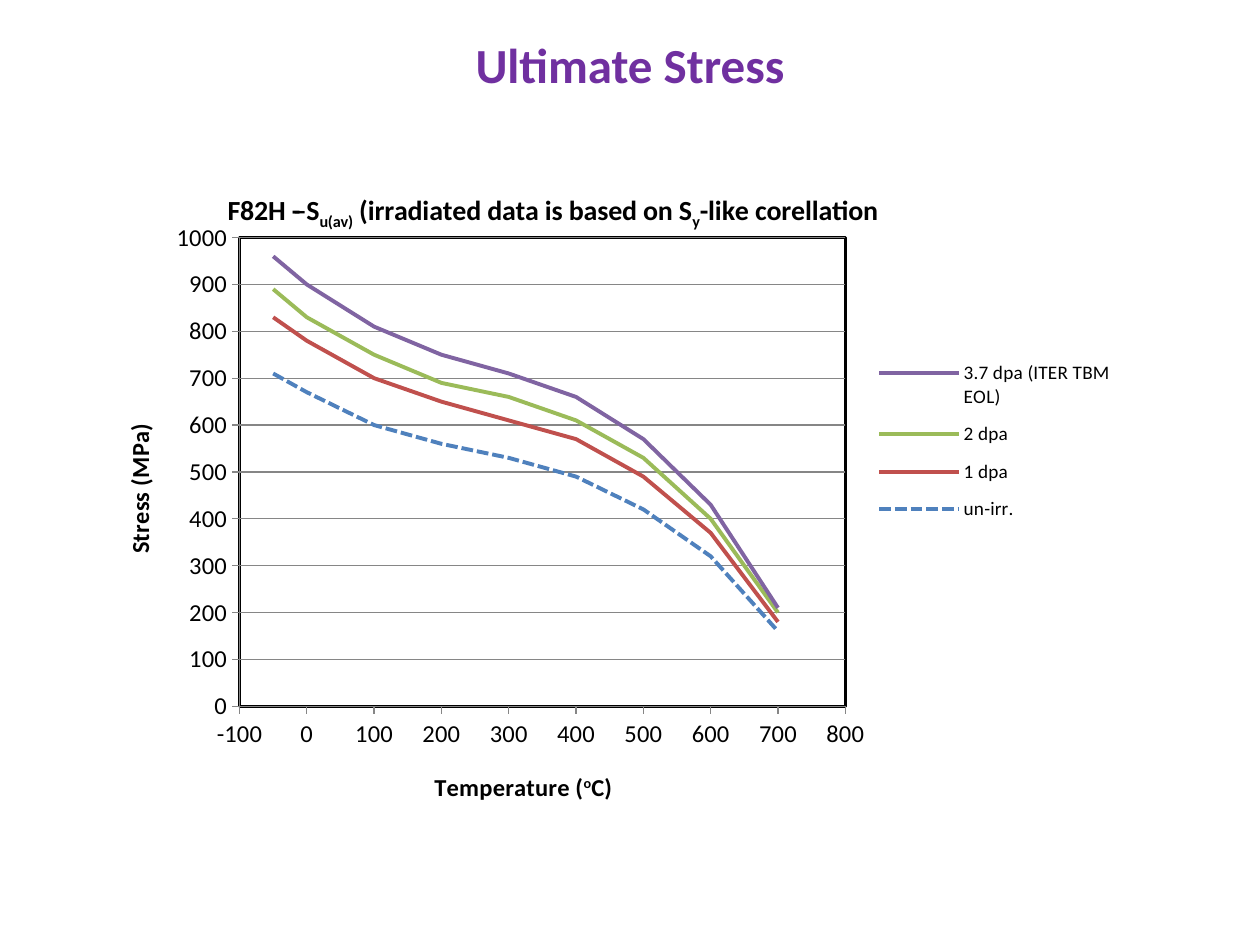
from lxml import etree
from pptx import Presentation
from pptx.chart.data import XyChartData
from pptx.dml.color import RGBColor
from pptx.enum.chart import XL_AXIS_CROSSES as Crosses
from pptx.enum.chart import XL_CHART_TYPE as ChartType
from pptx.enum.chart import XL_LEGEND_POSITION as LegendPosition
from pptx.enum.chart import XL_TICK_MARK as TickMark
from pptx.enum.dml import MSO_LINE as Dash
from pptx.enum.text import MSO_ANCHOR as Anchor
from pptx.enum.text import PP_ALIGN as Align
from pptx.oxml import parse_xml
from pptx.oxml.ns import nsdecls, qn
from pptx.util import Inches, Pt

BLACK = RGBColor(0x00, 0x00, 0x00)
GRAY = RGBColor(0x86, 0x86, 0x86)
PURPLE = RGBColor(0x70, 0x30, 0xA0)
VIOLET = RGBColor(0x80, 0x64, 0xA2)
GREEN = RGBColor(0x9B, 0xBB, 0x59)
RED = RGBColor(0xC0, 0x50, 0x4D)
BLUE = RGBColor(0x4F, 0x81, 0xBD)
FONT = "Calibri"
SUBSCRIPT, SUPERSCRIPT = -25000, 30000

TEMPERATURES = [-50, 0, 100, 200, 300, 400, 500, 600, 700]
CURVES = [
    ("3.7 dpa (ITER TBM EOL)", VIOLET, Dash.SOLID,
     [960, 900, 810, 750, 710, 660, 570, 430, 210]),
    ("2 dpa", GREEN, Dash.SOLID,
     [890, 830, 750, 690, 660, 610, 530, 400, 200]),
    ("1 dpa", RED, Dash.SOLID,
     [830, 780, 700, 650, 610, 570, 490, 370, 180]),
    ("un-irr.", BLUE, Dash.SQUARE_DOT,
     [710, 670, 600, 560, 530, 490, 420, 320, 160]),
]


def style_font(font, size, bold=False, color=BLACK):
    font.name = FONT
    font.size = Pt(size)
    font.bold = bold
    font.color.rgb = color


def add_spans(para, spans, size, color=BLACK):
    for text, baseline in spans:
        span = para.add_run()
        span.text = text
        style_font(span.font, size, True, color)
        if baseline:
            span.font._element.set("baseline", str(baseline))


def make_layout(x, y, w=None, h=None, inner=False):
    layout = etree.Element(qn("c:layout"))
    manual = etree.SubElement(layout, qn("c:manualLayout"))
    settings = [("xMode", "edge"), ("yMode", "edge"),
                ("x", x), ("y", y), ("w", w), ("h", h)]
    if inner:
        settings.insert(0, ("layoutTarget", "inner"))
    for name, value in settings:
        if value is not None:
            etree.SubElement(manual, qn(f"c:{name}")).set("val", str(value))
    return layout


def remove_layout(element):
    for layout in element.findall(qn("c:layout")):
        element.remove(layout)


def fill_chart_title(title, spans, size, x, y):
    add_spans(title.text_frame.paragraphs[0], spans, size)
    element = title._element
    remove_layout(element)
    element.find(qn("c:tx")).addnext(make_layout(x, y))


def add_heading(page, text):
    box = page.shapes.title
    box.left, box.top = Inches(0), Inches(0.17)
    box.width, box.height = Inches(10), Inches(0.67)
    frame = box.text_frame
    frame.vertical_anchor = Anchor.MIDDLE
    para = frame.paragraphs[0]
    para.alignment = Align.CENTER
    add_spans(para, [(text, 0)], 28, PURPLE)


def format_axis(axis, low, high):
    axis.minimum_scale, axis.maximum_scale = low, high
    axis.major_unit = 100
    axis.major_tick_mark = TickMark.OUTSIDE
    axis.minor_tick_mark = TickMark.NONE
    axis.crosses = Crosses.MINIMUM
    axis.tick_labels.number_format = "0"
    axis.tick_labels.number_format_is_linked = False
    axis.format.line.color.rgb = GRAY
    axis.format.line.width = Pt(0.75)
    style_font(axis.tick_labels.font, 14)


def format_plot_area(chart):
    area = chart._chartSpace.chart.plotArea
    remove_layout(area)
    area.insert(0, make_layout(0.138, 0.094, 0.539, 0.75, inner=True))
    area.append(parse_xml(
        f'<c:spPr {nsdecls("c", "a")}><a:noFill/><a:ln w="{Pt(2)}">'
        f'<a:solidFill><a:srgbClr val="{BLACK}"/></a:solidFill></a:ln></c:spPr>'))


def format_legend(chart):
    chart.has_legend = True
    legend = chart.legend
    legend.position = LegendPosition.RIGHT
    legend.include_in_layout = False
    style_font(legend.font, 11)
    remove_layout(legend._element)
    legend._element.find(qn("c:legendPos")).addnext(
        make_layout(0.7, 0.27, 0.22, 0.3))


def add_stress_chart(page):
    data = XyChartData()
    for name, color, dash, stresses in CURVES:
        series = data.add_series(name)
        for temperature, stress in zip(TEMPERATURES, stresses):
            series.add_data_point(temperature, stress)
    chart = page.shapes.add_chart(
        ChartType.XY_SCATTER_SMOOTH_NO_MARKERS, Inches(0.67), Inches(1.42),
        Inches(8.92), Inches(5), data).chart
    style_font(chart.font, 14)
    chart.plots[0].vary_by_categories = False
    for series, (name, color, dash, stresses) in zip(chart.plots[0].series, CURVES):
        series.smooth = True
        series.format.line.color.rgb = color
        series.format.line.width = Pt(2.25)
        series.format.line.dash_style = dash

    temperature_axis, stress_axis = chart.category_axis, chart.value_axis
    format_axis(temperature_axis, -100, 800)
    format_axis(stress_axis, 0, 1000)
    temperature_axis.has_major_gridlines = False
    stress_axis.has_major_gridlines = True
    stress_axis.major_gridlines.format.line.color.rgb = GRAY
    stress_axis.major_gridlines.format.line.width = Pt(0.75)
    format_plot_area(chart)
    format_legend(chart)

    chart.has_title = True
    fill_chart_title(chart.chart_title, [
        ("F82H -̶ S", 0), ("u(av)", SUBSCRIPT),
        (" (irradiated data is based on S", 0), ("y", SUBSCRIPT),
        ("-like corellation", 0)], 16, 0.124, 0.015)
    chart.chart_title._element.find(qn("c:overlay")).set("val", "1")
    fill_chart_title(temperature_axis.axis_title, [
        ("Temperature (", 0), ("o", SUPERSCRIPT), ("C)", 0)], 14, 0.308, 0.94)
    fill_chart_title(stress_axis.axis_title, [("Stress (MPa)", 0)], 14, 0.03, 0.386)
    body = stress_axis.axis_title.text_frame._txBody.find(qn("a:bodyPr"))
    body.set("rot", "-5400000")
    body.set("vert", "horz")


def main():
    deck = Presentation()
    deck.slide_width, deck.slide_height = Inches(10), Inches(7.5)
    page = deck.slides.add_slide(deck.slide_layouts[5])
    add_heading(page, "Ultimate Stress")
    add_stress_chart(page)
    deck.save("out.pptx")


if __name__ == "__main__":
    main()
